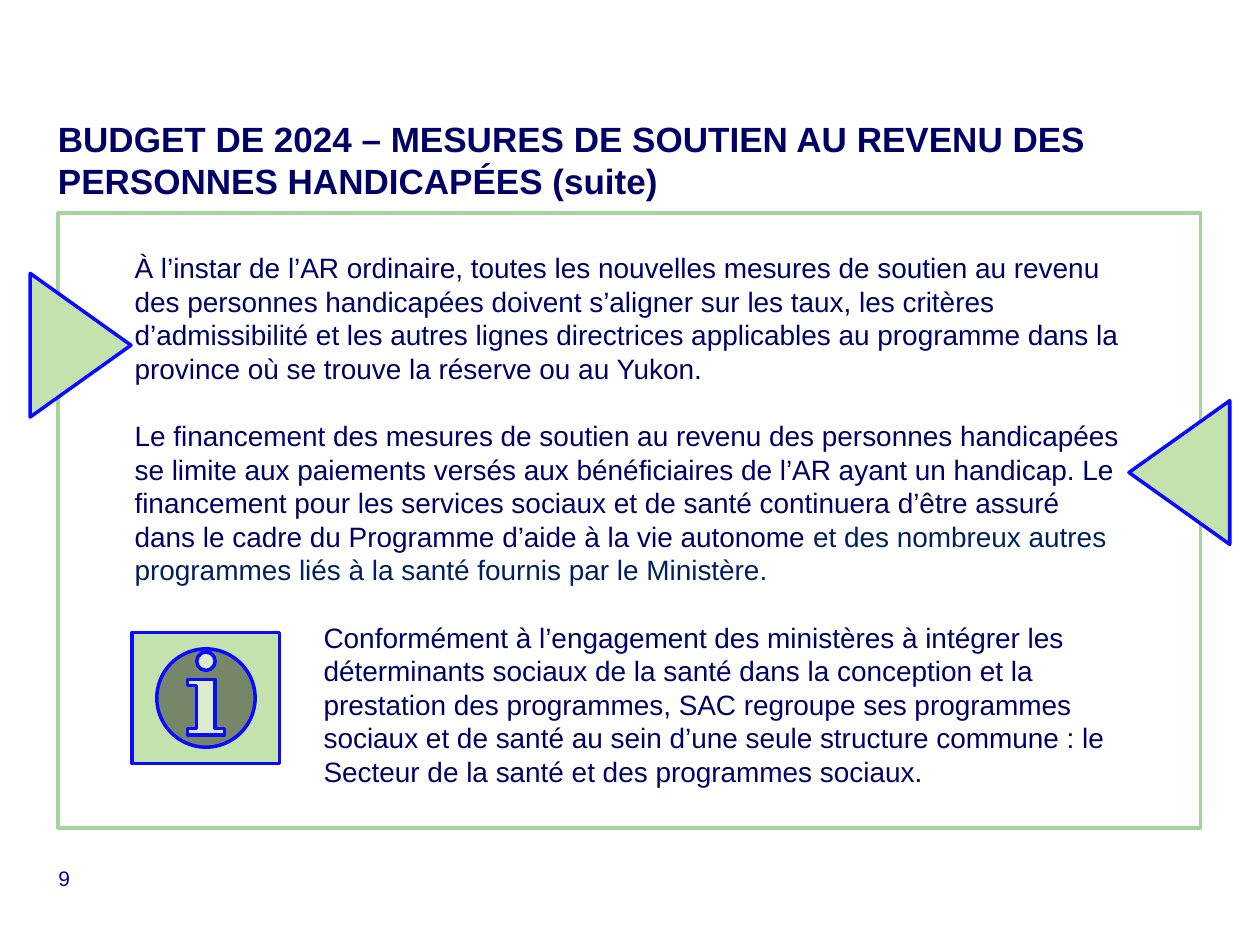
from dataclasses import dataclass

from pptx import Presentation
from pptx.dml.color import RGBColor
from pptx.enum.shapes import MSO_SHAPE as Shape
from pptx.enum.text import PP_ALIGN as Align
from pptx.util import Inches, Pt


@dataclass(frozen=True)
class Theme:
    font: str = "Arial"
    navy: str = "000066"
    dark_blue: str = "002060"
    number_blue: str = "0000A3"
    frame_green: str = "A6D39D"
    pale_green: str = "C4E2AE"
    outline_blue: str = "0A0AFF"
    title_size: float = 20
    title_spacing: float = 24
    body_size: float = 16
    body_spacing: float = 19.2
    number_size: float = 12
    line_width: float = 2


class SlideBuilder:
    COLUMNS, ROWS = 100, 75

    def __init__(self, deck, theme):
        self.theme = theme
        self.width, self.height = deck.slide_width, deck.slide_height
        self.page = deck.slides.add_slide(deck.slide_layouts[6])

    def place(self, column, row, columns, rows):
        across, down = self.width / self.COLUMNS, self.height / self.ROWS
        return [round(value) for value in
                (column * across, row * down, columns * across, rows * down)]

    def shape(self, kind, area, line, fill=None, rotation=0):
        shape = self.page.shapes.add_shape(kind, *self.place(*area))
        shape.shadow.inherit = False
        shape.rotation = rotation
        shape.line.color.rgb = RGBColor.from_string(line)
        shape.line.width = Pt(self.theme.line_width)
        if fill:
            shape.fill.solid()
            shape.fill.fore_color.rgb = RGBColor.from_string(fill)
        else:
            shape.fill.background()
        return shape

    def marker(self, area, rotation=0):
        arrow = self.shape(Shape.PENTAGON, area, self.theme.outline_blue,
                           self.theme.pale_green, rotation)
        arrow.adjustments[0] = 1

    def text_box(self, area, inset=True):
        frame = self.page.shapes.add_textbox(*self.place(*area)).text_frame
        frame.word_wrap = True
        if not inset:
            frame.margin_left = frame.margin_right = 0
            frame.margin_top = frame.margin_bottom = 0
        return frame

    def add_spans(self, para, spans, size, spacing=None, bold=False):
        if spacing:
            para.line_spacing = Pt(spacing)
        for words, color in spans:
            span = para.add_run()
            span.text = words
            span.font.name = self.theme.font
            span.font.size = Pt(size)
            span.font.bold = bold
            span.font.color.rgb = RGBColor.from_string(color)

    def title(self, area, words):
        frame = self.text_box(area, inset=False)
        self.add_spans(frame.paragraphs[0], [(words, self.theme.navy)],
                       self.theme.title_size, self.theme.title_spacing, bold=True)

    def page_number(self, area, words):
        para = self.text_box(area).paragraphs[0]
        para.alignment = Align.CENTER
        self.add_spans(para, [(words, self.theme.number_blue)],
                       self.theme.number_size)

    def body(self, area, paragraphs):
        frame = self.text_box(area)
        for index, (indent, spans) in enumerate(paragraphs):
            para = frame.add_paragraph() if index else frame.paragraphs[0]
            if index:
                para.space_before = Pt(self.theme.body_spacing)
            if indent:
                properties = para._p.get_or_add_pPr()
                properties.set("marL", str(Inches(indent)))
                properties.set("indent", "0")
            self.add_spans(para, spans, self.theme.body_size,
                           self.theme.body_spacing)


def main():
    deck = Presentation()
    deck.slide_width, deck.slide_height = Inches(10), Inches(7.5)
    theme = Theme()
    builder = SlideBuilder(deck, theme)

    builder.page_number((0.4, 68.2, 9.4, 3), "9")
    builder.title(
        (4.6, 9.3, 90.7, 6.4),
        "BUDGET DE 2024 – MESURES DE SOUTIEN AU REVENU DES "
        "PERSONNES HANDICAPÉES (suite)")
    builder.shape(Shape.RECTANGLE, (4.6, 16.9, 90.7, 48.8), theme.frame_green)
    builder.marker((2.4, 21.7, 8, 11.4))
    builder.marker((89.6, 31.8, 8, 11.4), rotation=180)

    alignment = (
        "À l’instar de l’AR ordinaire, toutes les nouvelles mesures de soutien "
        "au revenu des personnes handicapées doivent s’aligner sur les taux, les "
        "critères d’admissibilité et les autres lignes directrices applicables au "
        "programme dans la province où se trouve la réserve ou au Yukon.")
    funding = (
        "Le financement des mesures de soutien au revenu des personnes "
        "handicapées se limite aux paiements versés aux bénéficiaires de l’AR "
        "ayant un handicap. Le financement pour les services sociaux et de santé "
        "continuera d’être assuré dans le cadre du Programme d’aide à la vie "
        "autonome ")
    other_programs = (
        "et des nombreux autres programmes liés à la santé fournis par le "
        "Ministère.")
    integration = (
        "Conformément à l’engagement des ministères à intégrer les déterminants "
        "sociaux de la santé dans la conception et la prestation des programmes, "
        "SAC regroupe ses programmes sociaux et de santé au sein d’une seule "
        "structure commune : le Secteur de la santé et des programmes sociaux.")
    builder.body((9.7, 19.4, 80.7, 38.7), [
        (0, [(alignment, theme.navy)]),
        (0, [(funding, theme.navy), (other_programs, theme.dark_blue)]),
        (1.5, [(integration, theme.navy)]),
    ])
    builder.shape(Shape.ACTION_BUTTON_INFORMATION, (10.5, 50.2, 11.7, 10.4),
                  theme.outline_blue, theme.pale_green)

    deck.save("out.pptx")


if __name__ == "__main__":
    main()
